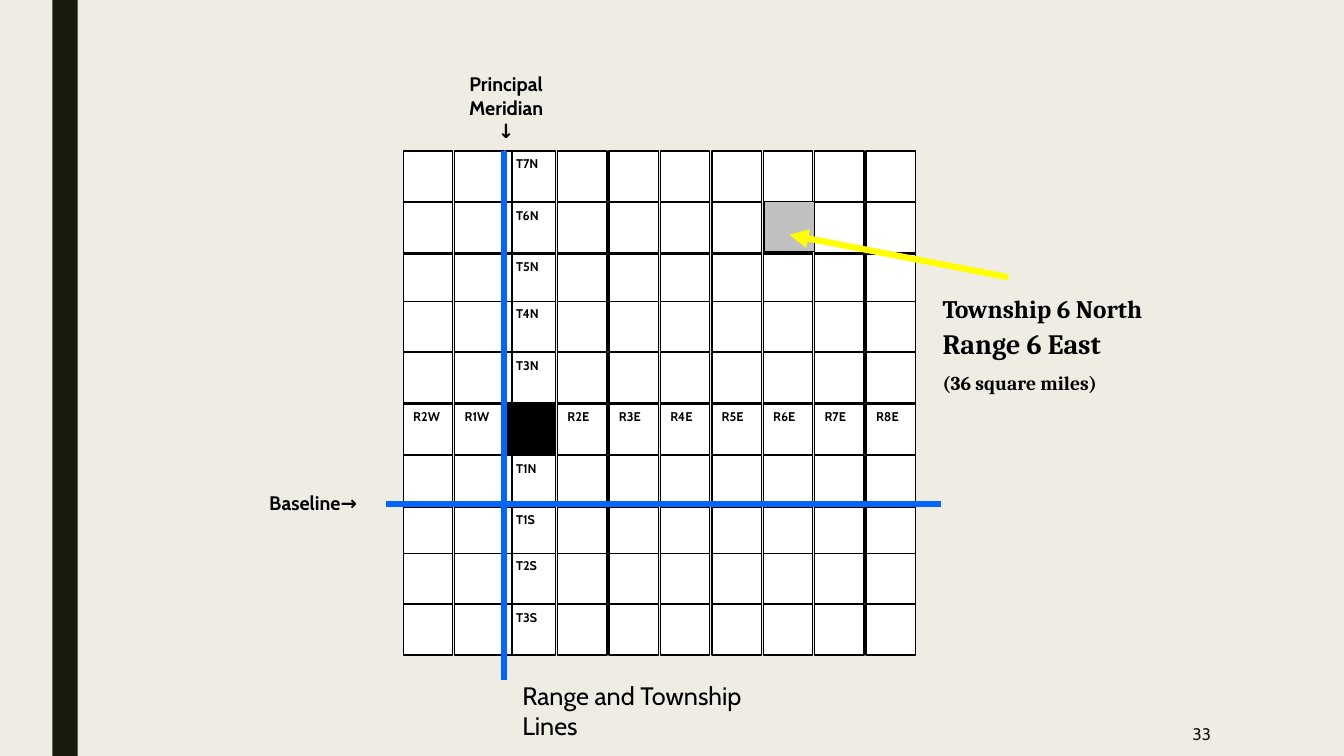
from dataclasses import dataclass

from lxml.etree import SubElement
from pptx import Presentation
from pptx.dml.color import RGBColor
from pptx.enum.shapes import MSO_CONNECTOR, MSO_SHAPE
from pptx.enum.text import MSO_ANCHOR, MSO_AUTO_SIZE, PP_ALIGN
from pptx.oxml.ns import qn
from pptx.util import Pt

PX = 9144  # EMU per px, 100 px to the inch
INK, DARK, WHITE, BLUE, YELLOW = "000000", "191B0E", "FFFFFF", "0066FF", "FFFF00"

# Survey grid: one column per range, one row per township
COL_LEFT, COL_STEP, CELL_W, CELL_H = 400, 51, 49, 50
ROW_TOPS = (150, 201, 252, 299, 350, 401, 452, 503, 549, 600)
RANGES = ("R2W", "R1W", "", "R2E", "R3E", "R4E", "R5E", "R6E", "R7E", "R8E")
TOWNSHIPS = ("T7N", "T6N", "T5N", "T4N", "T3N", "", "T1N", "T1S", "T2S", "T3S")
RANGE_ROW, TOWNSHIP_COL = 5, 2


@dataclass
class Line:
    text: str
    size: int = 14
    bold: bool = True
    font: str = "Cabin"
    color: str = INK
    align: PP_ALIGN = PP_ALIGN.LEFT
    before: int = 0


@dataclass
class Label:
    box: tuple[int, int, int, int]
    lines: list[Line]
    anchor: MSO_ANCHOR = MSO_ANCHOR.MIDDLE
    inset: int = 10


@dataclass
class Rule:
    start: tuple[int, int]
    end: tuple[int, int]
    color: str
    width: float
    arrow: bool = False


CAPTION = Label((508, 683, 270, 44),
                [Line("Range and Township Lines", 18, False)])
LABELS = [
    Label((400, 66, 154, 81),
          [Line(t, align=PP_ALIGN.CENTER) for t in ("Principal", "Meridian", "↓")],
          inset=60),
    Label((200, 482, 171, 33), [Line("Baseline→", align=PP_ALIGN.CENTER)], inset=60),
    Label((925, 286, 242, 113),
          [Line("Township 6 North", 18, font="Cambria"),
           Line("Range 6 East", 20, font="Cambria", before=2),
           Line("(36 square miles)", 14, font="Cambria", before=8)],
          MSO_ANCHOR.TOP),
    Label((1036, 706, 175, 44),
          [Line("33", 12, False, color=DARK, align=PP_ALIGN.RIGHT)]),
]
TOWNSHIP_EDGE = Rule((508, 150), (508, 650), INK, 1.5)
POINTER = Rule((1000, 275), (783, 233), YELLOW, 4.5, True)
BASELINE = Rule((383, 500), (933, 500), BLUE, 4.5)
MERIDIAN = Rule((500, 675), (500, 150), BLUE, 4.5)


def rgb(color: str) -> RGBColor:
    return RGBColor.from_string(color)


def emu(lengths: tuple[int, ...]) -> list[int]:
    return [n * PX for n in lengths]


def write(tf, lines: list[Line], anchor: MSO_ANCHOR, inset: int = 10) -> None:
    frame = {"word_wrap": True, "auto_size": MSO_AUTO_SIZE.NONE,
             "vertical_anchor": anchor, "margin_left": inset * PX,
             "margin_right": 10 * PX, "margin_top": 5 * PX, "margin_bottom": 5 * PX}
    for name, value in frame.items():
        setattr(tf, name, value)
    for i, line in enumerate(lines):
        p = tf.paragraphs[0] if i == 0 else tf.add_paragraph()
        p.alignment, p.space_before = line.align, Pt(line.before)
        r = p.add_run()
        r.text = line.text
        font = {"name": line.font, "size": Pt(line.size), "bold": line.bold}
        for name, value in font.items():
            setattr(r.font, name, value)
        r.font.color.rgb = rgb(line.color)


def add_rect(shapes, box: tuple[int, int, int, int], fill: str,
             border: float = 0, text: str = "") -> None:
    sp = shapes.add_shape(MSO_SHAPE.RECTANGLE, *emu(box))
    sp.shadow.inherit = False
    sp.fill.solid()
    sp.fill.fore_color.rgb = rgb(fill)
    if border:
        sp.line.color.rgb = rgb(INK)
        sp.line.width = Pt(border)
    else:
        sp.line.fill.background()
    if text:
        write(sp.text_frame, [Line(text, 9)], MSO_ANCHOR.TOP)


def add_rule(shapes, rule: Rule) -> None:
    c = shapes.add_connector(MSO_CONNECTOR.STRAIGHT, *emu(rule.start + rule.end))
    c.line.color.rgb = rgb(rule.color)
    c.line.width = Pt(rule.width)
    if rule.arrow:
        SubElement(c.line._get_or_add_ln(), qn("a:tailEnd"), type="triangle")
    SubElement(c._element.spPr, qn("a:effectLst"))


def add_label(shapes, label: Label) -> None:
    tb = shapes.add_textbox(*emu(label.box))
    write(tb.text_frame, label.lines, label.anchor, label.inset)


def add_grid(shapes) -> None:
    grid = shapes.add_group_shape().shapes
    for row, top in enumerate(ROW_TOPS):
        for col, range_name in enumerate(RANGES):
            text = ""
            if row == RANGE_ROW:
                text = range_name
            elif col == TOWNSHIP_COL:
                text = TOWNSHIPS[row]
            origin = (row, col) == (RANGE_ROW, TOWNSHIP_COL)
            box = (COL_LEFT + col * COL_STEP, top, CELL_W, CELL_H)
            add_rect(grid, box, INK if origin else WHITE, 1, text)


def main() -> None:
    prs = Presentation()
    prs.slide_width, prs.slide_height = emu((1333, 750))
    s = prs.slides.add_slide(prs.slide_layouts[5])
    s.background.fill.solid()
    s.background.fill.fore_color.rgb = rgb("EFEDE3")

    # Caption as the slide title
    title = s.shapes.title
    title.left, title.top, title.width, title.height = emu(CAPTION.box)
    write(title.text_frame, CAPTION.lines, CAPTION.anchor)

    # Side bar, grid and highlighted township
    add_rect(s.shapes, (52, 0, 25, 750), DARK)
    add_grid(s.shapes)
    add_rect(s.shapes, (758, 200, 50, 50), "C0C0C0", 0.75)

    # Labels, survey lines and pointer
    add_rule(s.shapes, TOWNSHIP_EDGE)
    for label in LABELS:
        add_label(s.shapes, label)
    for rule in (POINTER, BASELINE, MERIDIAN):
        add_rule(s.shapes, rule)

    prs.save("out.pptx")


if __name__ == "__main__":
    main()
